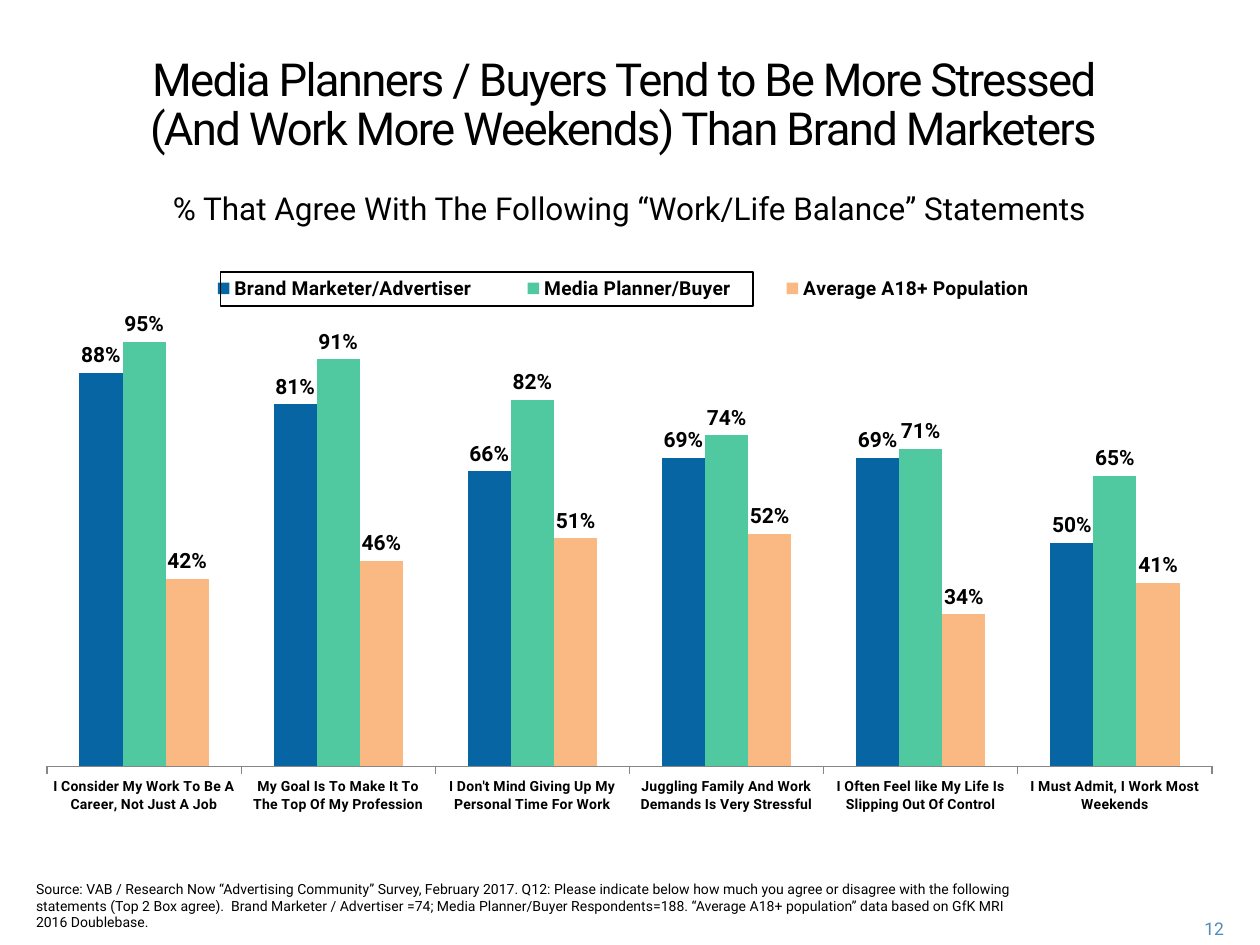
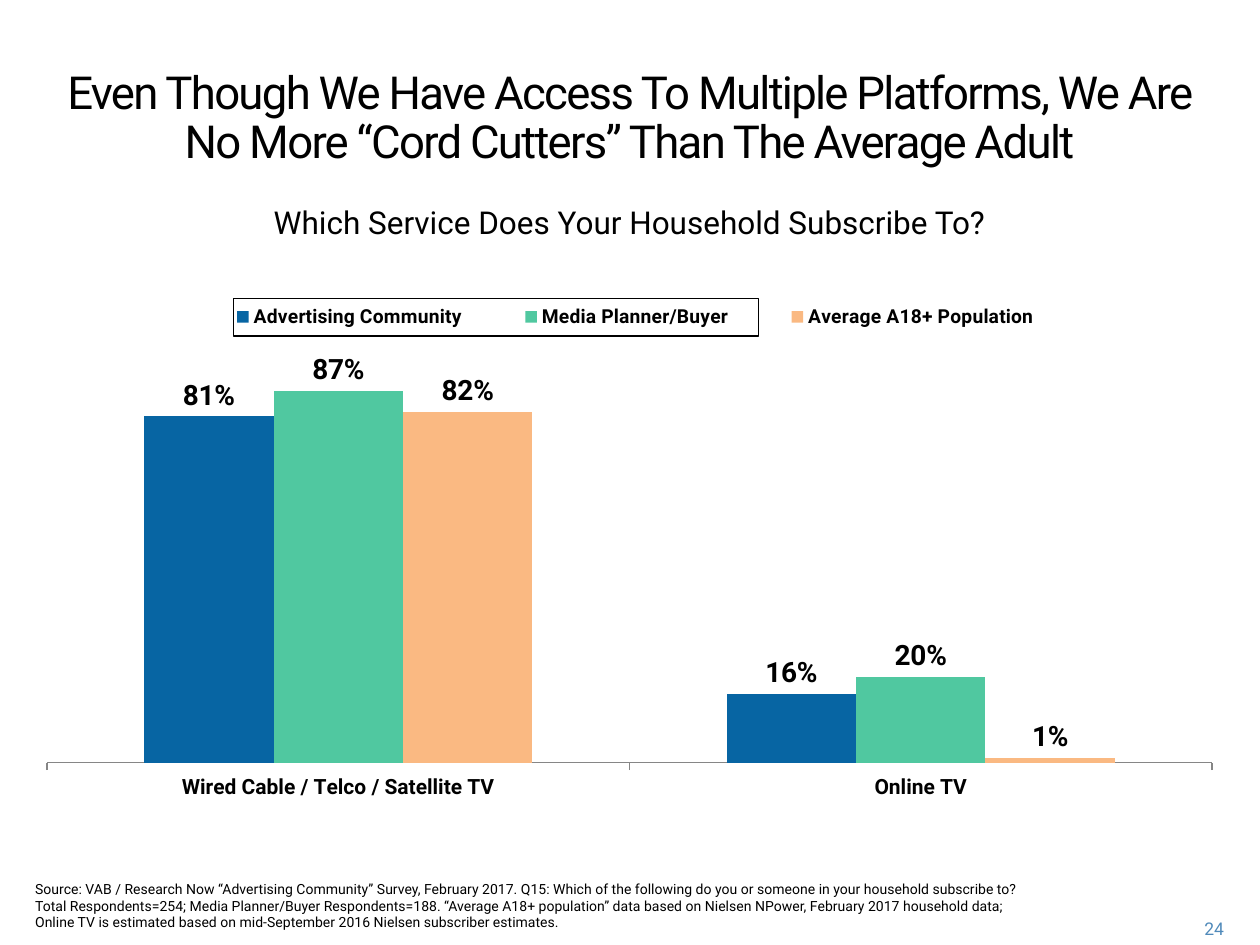
from dataclasses import dataclass
from typing import NamedTuple

from lxml.etree import SubElement
from pptx import Presentation
from pptx.chart.data import CategoryChartData as ChartData
from pptx.dml.color import RGBColor as Rgb
from pptx.enum.chart import XL_CHART_TYPE as Kind
from pptx.enum.chart import XL_LABEL_POSITION as Spot
from pptx.enum.chart import XL_LEGEND_POSITION as Side
from pptx.enum.chart import XL_TICK_LABEL_POSITION as TickSpot
from pptx.enum.chart import XL_TICK_MARK as Tick
from pptx.enum.shapes import MSO_SHAPE as Form
from pptx.enum.text import MSO_ANCHOR as Anchor
from pptx.enum.text import PP_ALIGN as Align
from pptx.oxml import parse_xml
from pptx.oxml.ns import nsdecls, qn
from pptx.util import Pt


@dataclass(frozen=True)
class Theme:
    face: str = "Roboto"
    ink: Rgb = Rgb(0, 0, 0)
    page: Rgb = Rgb(0x50, 0x8A, 0xBA)
    axis: Rgb = Rgb(0x86, 0x86, 0x86)
    bars: tuple[Rgb, ...] = (
        Rgb(0x07, 0x65, 0xA3),
        Rgb(0x50, 0xC8, 0xA0),
        Rgb(0xFA, 0xB9, 0x82),
    )
    title: float = 26
    lead: float = 28
    sub: float = 18
    note: float = 8
    num: float = 10
    key: float = 11


class Box(NamedTuple):
    left: float
    top: float
    width: float
    height: float

    def points(self) -> tuple[Pt, ...]:
        return tuple(Pt(side) for side in self)


class Style(NamedTuple):
    size: float
    color: Rgb
    align: Align = Align.CENTER
    anchor: Anchor = Anchor.TOP
    lead: float | None = None
    track: int = 0


class Graph(NamedTuple):
    box: Box
    plot: Box
    key: Box
    tick: float
    label: float
    cats: tuple[str, ...]
    rows: dict[str, tuple[float, ...]]


class Page(NamedTuple):
    num: str
    title: str
    title_box: Box
    sub: str
    sub_top: float
    note: str
    note_box: Box
    graph: Graph
    frame: Box
    frame_line: float


THEME = Theme()
LEFT, WIDE = 13, 693.5
TITLE = Style(THEME.title, THEME.ink, lead=THEME.lead, track=-100)
SUB = Style(THEME.sub, THEME.ink)
NOTE = Style(THEME.note, THEME.ink, Align.LEFT)
NUM = Style(THEME.num, THEME.page, Align.RIGHT, Anchor.MIDDLE)
NUM_BOX = Box(662.5, 521.5, 44, 18)

PAGES = (
    Page(
        num="12",
        title="Media Planners / Buyers Tend to Be More Stressed "
        "(And Work More Weekends) Than Brand Marketers",
        title_box=Box(70, 29, 572.5, 47),
        sub="% That Agree With The Following “Work/Life Balance” Statements",
        sub_top=104.5,
        note="Source: VAB / Research Now “Advertising Community” Survey, February 2017. "
        "Q12: Please indicate below how much you agree or disagree with the following "
        "statements (Top 2 Box agree).  Brand Marketer / Advertiser =74; Media "
        "Planner/Buyer Respondents=188. “Average A18+ population” data based on "
        "GfK MRI 2016 Doublebase.",
        note_box=Box(13.5, 499.5, 588, 34),
        graph=Graph(
            box=Box(LEFT, 150.5, WIDE, 319.5),
            plot=Box(0.02, 0.1, 0.96, 0.8),
            key=Box(0.12, 0.01, 0.75, 0.07),
            tick=8,
            label=12,
            cats=(
                "I Consider My Work To Be A Career, Not Just A Job",
                "My Goal Is To Make It To The Top Of My Profession",
                "I Don't Mind Giving Up My Personal Time For Work",
                "Juggling Family And Work Demands Is Very Stressful",
                "I Often Feel like My Life Is Slipping Out Of Control",
                "I Must Admit, I Work Most Weekends",
            ),
            rows={
                "Brand Marketer/Advertiser": (0.88, 0.81, 0.66, 0.69, 0.69, 0.5),
                "Media Planner/Buyer": (0.95, 0.91, 0.82, 0.74, 0.71, 0.65),
                "Average A18+ Population": (0.42, 0.46, 0.51, 0.52, 0.34, 0.41),
            },
        ),
        frame=Box(126, 155.5, 304.5, 19.5),
        frame_line=1,
    ),
    Page(
        num="24",
        title="Even Though We Have Access To Multiple Platforms, We Are "
        "No More “Cord Cutters” Than The Average Adult",
        title_box=Box(LEFT, 36, WIDE, 71),
        sub="Which Service Does Your Household Subscribe To?",
        sub_top=112.5,
        note="Source: VAB / Research Now “Advertising Community” Survey, February 2017. "
        "Q15: Which of the following do you or someone in your household subscribe to? "
        "Total Respondents=254; Media Planner/Buyer Respondents=188. “Average A18+ "
        "population” data based on Nielsen NPower, February 2017 household data; "
        "Online TV is estimated based on mid-September 2016 Nielsen subscriber estimates.",
        note_box=Box(LEFT, 499.5, 590.5, 28),
        graph=Graph(
            box=Box(LEFT, 161.5, WIDE, 301.5),
            plot=Box(0.02, 0.1, 0.96, 0.81),
            key=Box(0.13, 0.03, 0.75, 0.07),
            tick=12,
            label=16,
            cats=("Wired Cable / Telco / Satellite TV", "Online TV"),
            rows={
                "Advertising Community": (0.81, 0.16),
                "Media Planner/Buyer": (0.87, 0.2),
                "Average A18+ Population": (0.82, 0.01),
            },
        ),
        frame=Box(133.5, 170.5, 300, 21.5),
        frame_line=0.75,
    ),
)


def write(slide, box: Box, text: str, style: Style) -> None:
    frame = slide.shapes.add_textbox(*box.points()).text_frame
    frame.word_wrap = True
    frame.vertical_anchor = style.anchor
    para = frame.paragraphs[0]
    para.alignment = style.align
    if style.lead:
        para.line_spacing = Pt(style.lead)
    run = para.add_run()
    run.text = text
    set_font(run.font, style.size, style.color)
    if style.track:
        run.font._element.set("spc", str(style.track))


def set_font(font, size: float, color: Rgb = THEME.ink, bold: bool = False) -> None:
    font.name = THEME.face
    font.size = Pt(size)
    font.bold = bold
    font.color.rgb = color


def place(node, spot: int, box: Box, inner: bool = False) -> None:
    for old in node.findall(qn("c:layout")):
        node.remove(old)
    layout = parse_xml(f"<c:layout {nsdecls('c')}/>")
    node.insert(spot, layout)
    manual = SubElement(layout, qn("c:manualLayout"))
    parts = {"layoutTarget": "inner"} if inner else {}
    parts |= {"xMode": "edge", "yMode": "edge"}
    parts |= dict(zip("xywh", map(str, box)))
    for name, value in parts.items():
        SubElement(manual, qn(f"c:{name}")).set("val", value)


def draw_graph(slide, graph: Graph) -> None:
    data = ChartData(number_format="0%")
    data.categories = graph.cats
    for name, row in graph.rows.items():
        data.add_series(name, row)
    chart = slide.shapes.add_chart(Kind.COLUMN_CLUSTERED, *graph.box.points(), data).chart
    set_font(chart.font, THEME.key)
    chart.has_title = False

    chart.has_legend = True
    key = chart.legend
    key.position = Side.TOP
    key.include_in_layout = False
    set_font(key.font, THEME.key, bold=True)
    place(key._element, 1, graph.key)
    place(chart._chartSpace.chart.plotArea, 0, graph.plot, inner=True)

    base = chart.category_axis
    base.major_tick_mark = Tick.OUTSIDE
    base.minor_tick_mark = Tick.NONE
    base.tick_label_position = TickSpot.LOW
    base.has_major_gridlines = False
    base.format.line.color.rgb = THEME.axis
    base.format.line.width = Pt(0.75)
    set_font(base.tick_labels.font, graph.tick, bold=True)

    scale = chart.value_axis
    scale.minimum_scale, scale.maximum_scale = 0, 1
    scale.has_major_gridlines = False
    scale.visible = False

    plot = chart.plots[0]
    plot.vary_by_categories = False
    plot.gap_width, plot.overlap = 150, 0
    for bars, color in zip(plot.series, THEME.bars):
        bars.format.fill.solid()
        bars.format.fill.fore_color.rgb = color
        bars.invert_if_negative = False
        tags = bars.data_labels
        tags.show_value = True
        tags.position = Spot.OUTSIDE_END
        tags.number_format = "0%"
        tags.number_format_is_linked = False
        set_font(tags.font, graph.label, bold=True)


def draw_frame(slide, box: Box, width: float) -> None:
    frame = slide.shapes.add_shape(Form.RECTANGLE, *box.points())
    frame.shadow.inherit = False
    frame.fill.background()
    frame.line.color.rgb = THEME.ink
    frame.line.width = Pt(width)


def draw_page(deck, page: Page) -> None:
    slide = deck.slides.add_slide(deck.slide_layouts[6])
    write(slide, NUM_BOX, page.num, NUM)
    write(slide, page.title_box, page.title, TITLE)
    write(slide, Box(LEFT, page.sub_top, WIDE, 29), page.sub, SUB)
    write(slide, page.note_box, page.note, NOTE)
    draw_graph(slide, page.graph)
    draw_frame(slide, page.frame, page.frame_line)


def main() -> None:
    deck = Presentation()
    deck.slide_width, deck.slide_height = Pt(720), Pt(540)
    for page in PAGES:
        draw_page(deck, page)
    deck.save("out.pptx")


if __name__ == "__main__":
    main()
